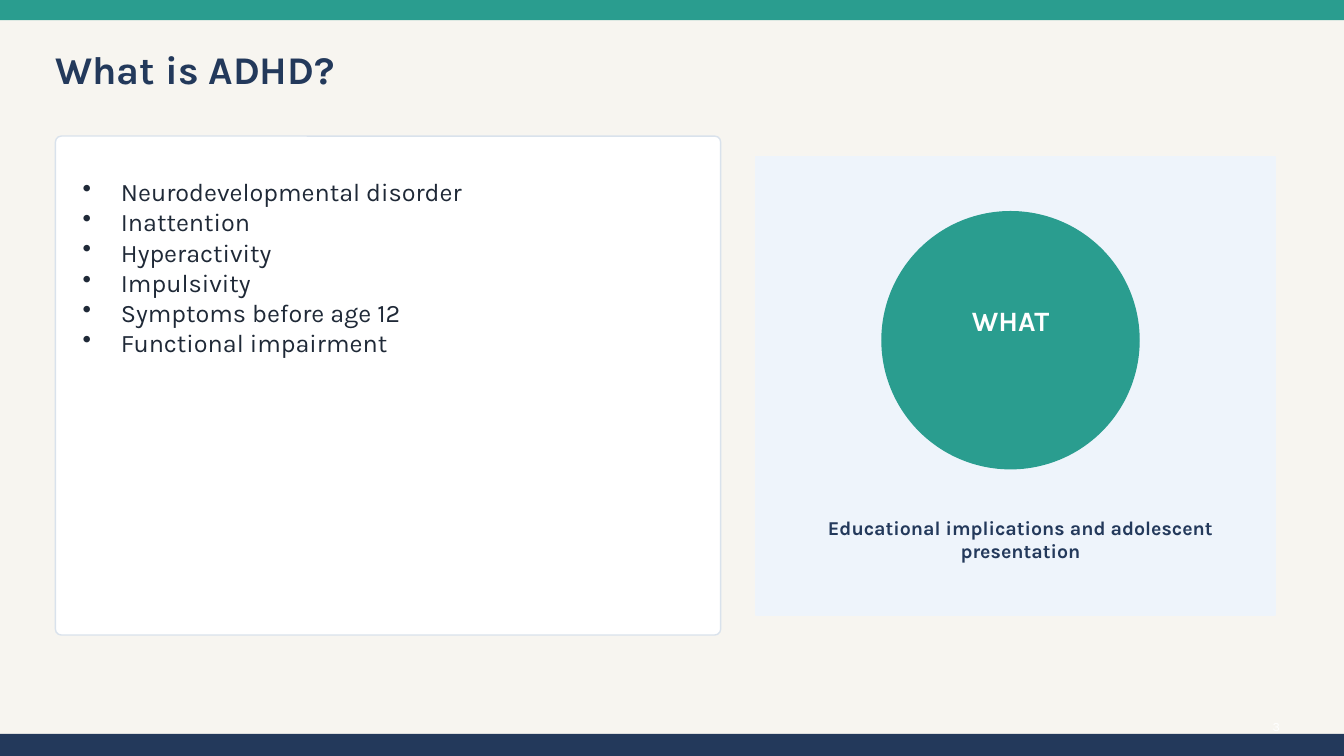
from dataclasses import dataclass

from lxml.etree import SubElement
from pptx import Presentation
from pptx.dml.color import RGBColor
from pptx.enum.shapes import MSO_SHAPE
from pptx.enum.text import MSO_ANCHOR, MSO_AUTO_SIZE, PP_ALIGN
from pptx.oxml.ns import qn
from pptx.util import Pt


@dataclass(frozen=True)
class Theme:
    font: str = "Karla"
    paper: str = "F7F5F0"
    teal: str = "2A9D8F"
    navy: str = "23395B"
    ink: str = "1F2937"
    white: str = "FFFFFF"
    border: str = "D9E2EC"
    panel: str = "EEF4FB"
    title: int = 28
    label: int = 20
    body: int = 18
    caption: int = 14
    number: int = 9


class Deck:
    def __init__(self, prs, theme):
        self.theme = theme
        self.s = prs.slides.add_slide(prs.slide_layouts[5])
        fill = self.s.background.fill
        fill.solid()
        fill.fore_color.rgb = RGBColor.from_string(theme.paper)

    def shape(self, kind, box, fill, line=None):
        sp = self.s.shapes.add_shape(kind, *map(Pt, box))
        sp.shadow.inherit = False
        sp.fill.solid()
        sp.fill.fore_color.rgb = RGBColor.from_string(fill)
        if line:
            sp.line.color.rgb = RGBColor.from_string(line)
            sp.line.width = Pt(1)
        else:
            sp.line.fill.background()
        return sp

    def set_text(self, sp, lines, size, color, bold=False,
                 align=PP_ALIGN.LEFT, anchor=MSO_ANCHOR.MIDDLE, indent=0):
        tf = sp.text_frame
        tf.text = "\n".join(lines)
        tf.word_wrap = True
        tf.auto_size = MSO_AUTO_SIZE.NONE
        tf.vertical_anchor = anchor
        tf.margin_left = tf.margin_right = tf.margin_top = tf.margin_bottom = 0
        for p in tf.paragraphs:
            p.alignment = align
            if indent:
                pPr = p._p.get_or_add_pPr()
                pPr.set("marL", str(Pt(indent)))
                pPr.set("indent", str(-Pt(indent)))
                SubElement(pPr, qn("a:buChar")).set("char", "•")
            for r in p.runs:
                r.font.name = self.theme.font
                r.font.size = Pt(size)
                r.font.bold = bold
                r.font.color.rgb = RGBColor.from_string(color)

    def title(self, box, text):
        sp = self.s.shapes.title
        sp.left, sp.top, sp.width, sp.height = map(Pt, box)
        self.set_text(sp, [text], self.theme.title, self.theme.navy, bold=True)

    def text(self, box, text, size, color, **style):
        sp = self.s.shapes.add_textbox(*map(Pt, box))
        self.set_text(sp, [text], size, color, **style)

    def bullets(self, box, items):
        sp = self.s.shapes.add_textbox(*map(Pt, box))
        self.set_text(sp, items, self.theme.body, self.theme.ink,
                      anchor=MSO_ANCHOR.TOP, indent=27.36)


def main():
    prs = Presentation()
    prs.slide_width, prs.slide_height = Pt(960), Pt(540)
    t = Theme()
    deck = Deck(prs, t)

    # Top and bottom bands, page number
    deck.shape(MSO_SHAPE.RECTANGLE, (0, 0, 960, 14.4), t.teal)
    deck.shape(MSO_SHAPE.RECTANGLE, (0, 524.16, 960, 15.84), t.navy)
    deck.text((889.2, 512.64, 25.2, 12.96), "3", t.number, t.white,
              align=PP_ALIGN.RIGHT)

    # Title
    deck.title((39.6, 27.36, 633.6, 43.2), "What is ADHD?")

    # Card with key points
    card = deck.shape(MSO_SHAPE.ROUNDED_RECTANGLE,
                      (39.6, 97.2, 475.2, 356.4), t.white, t.border)
    card.adjustments[0] = 0.012
    deck.bullets((59.04, 126, 428.4, 306), [
        "Neurodevelopmental disorder",
        "Inattention",
        "Hyperactivity",
        "Impulsivity",
        "Symptoms before age 12",
        "Functional impairment",
    ])

    # Side panel with circle and caption
    deck.shape(MSO_SHAPE.RECTANGLE, (540, 111.6, 370.8, 327.6),
               t.panel, t.panel)
    deck.shape(MSO_SHAPE.OVAL, (630, 151.2, 183.6, 183.6), t.teal, t.teal)
    deck.text((644.4, 212.4, 154.8, 32.4), "WHAT", t.label, t.white,
              bold=True, align=PP_ALIGN.CENTER)
    deck.text((576, 360, 306, 50.4),
              "Educational implications and adolescent presentation",
              t.caption, t.navy, bold=True, align=PP_ALIGN.CENTER)

    prs.save("out.pptx")


if __name__ == "__main__":
    main()
